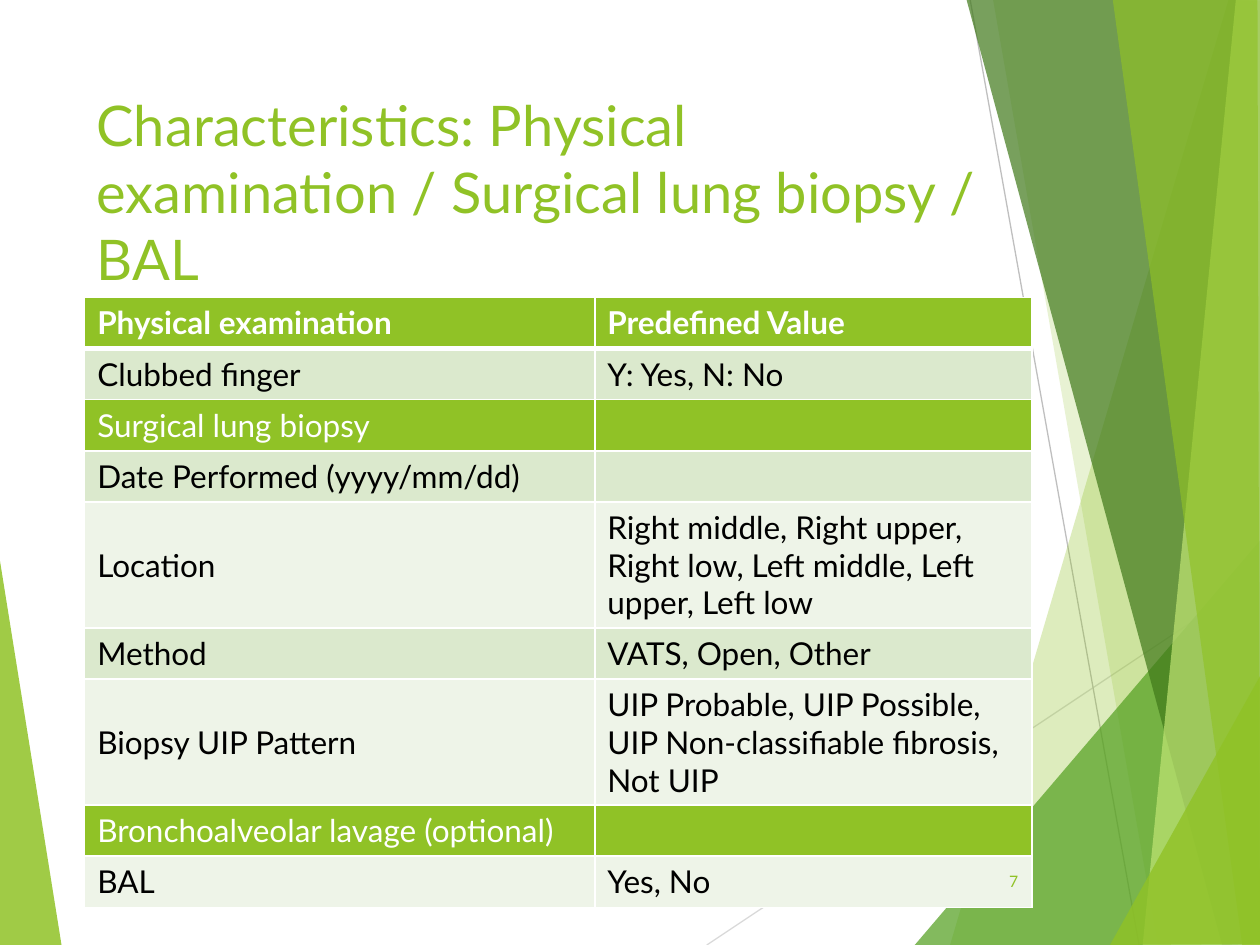
from pptx import Presentation
from pptx.dml.color import RGBColor
from pptx.enum import text as t
from pptx.oxml import parse_xml
from pptx.oxml.ns import nsdecls, qn
from pptx.util import Pt

LIME = RGBColor(0x90, 0xC2, 0x26)
GREEN = RGBColor(0x54, 0xA0, 0x21)
DARK = RGBColor(0x3F, 0x78, 0x19)
PALE = RGBColor(0xC0, 0xE4, 0x74)
BAND = RGBColor(0xDB, 0xE9, 0xCD)
LIGHT = RGBColor(0xEE, 0xF4, 0xE8)
WHITE = RGBColor(0xFF, 0xFF, 0xFF)
BLACK = RGBColor(0, 0, 0)
GREY = RGBColor(0xBF, 0xBF, 0xBF)
SILVER = RGBColor(0xD9, 0xD9, 0xD9)


def write(frame, words, size=18, color=BLACK, bold=False, align=t.PP_ALIGN.LEFT):
    para = frame.paragraphs[0]
    para.alignment = align
    for font in [para.font] + ([para.add_run().font] if words else []):
        font.name, font.size, font.bold = "Lato", Pt(size), bold
        font.color.rgb = color
    if words:
        para.runs[0].text = words


def edge(cell, side, width):
    cell._tc.get_or_add_tcPr().append(parse_xml(
        f'<a:{side} {nsdecls("a")} w="{Pt(width)}"><a:solidFill>'
        f'<a:srgbClr val="{WHITE}"/></a:solidFill></a:{side}>'))


deck = Presentation()
deck.slide_width, deck.slide_height = Pt(720), Pt(540)
slide = deck.slides.add_slide(deck.slide_layouts[5])
shapes = slide.shapes

lines = [
    (403.9, 540, 720.7, 329, SILVER),
    (554.4, 0, 650.9, 540, GREY),
]
facets = [
    (LIME, 85, [(-0.7, 316), (35.3, 540.7), (-0.7, 540)]),
    (LIME, 30, [(702, 0), (542.9, 540), (721.4, 540.7), (720.7, 0.7)]),
    (LIME, 20, [(567.4, -0.7), (661.7, 540), (720.7, 540), (720.7, -0.7)]),
    (GREEN, 72, [(522.7, 540), (720, 308.9), (720.7, 540)]),
    (DARK, 70, [(552.2, -0.7), (698.4, 540), (720.7, 539.3), (720.7, -0.7)]),
    (PALE, 70, [(706.3, -0.7), (653, 540), (720.7, 540), (720, -0.7)]),
    (LIME, 65, [(635.8, -0.7), (709.9, 540), (720, 540), (718.6, -0.7)]),
    (LIME, 80, [(634.3, 540), (720.7, 385.2), (720.7, 539.3)]),
]
for n, (color, alpha, dots) in enumerate(facets):
    pts = [(Pt(x), Pt(y)) for x, y in dots]
    build = shapes.build_freeform(*pts[0], scale=1.0)
    build.add_line_segments(pts[1:], close=True)
    facet = build.convert_to_shape()
    facet.shadow.inherit = False
    facet.fill.solid()
    facet.fill.fore_color.rgb = color
    facet.line.fill.background()
    tint = facet._element.spPr.find(qn("a:solidFill"))[0]
    tint.append(parse_xml(f'<a:alpha {nsdecls("a")} val="{alpha * 1000}"/>'))
    if n == 0:
        for *ends, shade in lines:
            line = shapes.add_connector(1, *map(Pt, ends))
            line.line.color.rgb = shade
            line.line.width = Pt(0.75)
            line._element.spPr.append(parse_xml(f'<a:effectLst {nsdecls("a")}/>'))

title = shapes.title
title.left, title.top, title.width, title.height = Pt(48), Pt(48), Pt(548.6), Pt(104)
title.text_frame.word_wrap = True
title.text_frame.auto_size = t.MSO_AUTO_SIZE.NONE
title.text_frame.vertical_anchor = t.MSO_ANCHOR.TOP
write(title.text_frame, "Characteristics: Physical examination / Surgical lung biopsy / BAL",
      size=32, color=LIME)
shapes._spTree.append(title._element)

rows = [
    ("Physical examination", "Predefined Value", LIME),
    ("Clubbed finger", "Y: Yes, N: No", BAND),
    ("Surgical lung biopsy", "", LIME),
    ("Date Performed (yyyy/mm/dd)", "", BAND),
    ("Location", "Right middle, Right upper, Right low, Left middle, Left upper, Left low", LIGHT),
    ("Method", "VATS, Open, Other", BAND),
    ("Biopsy UIP Pattern",
     "UIP Probable, UIP Possible, UIP Non-classifiable fibrosis, Not UIP", LIGHT),
    ("Bronchoalveolar lavage (optional)", "", LIME),
    ("BAL", "Yes, No", LIGHT),
]
table = shapes.add_table(len(rows), 2, Pt(48.4), Pt(170), Pt(541.4), Pt(262.8)).table
table.horz_banding = False
table.columns[0].width, table.columns[1].width = Pt(291.5), Pt(249.9)
for r, (*pair, fill) in enumerate(rows):
    table.rows[r].height = Pt(29.2)
    for c, words in enumerate(pair):
        cell = table.cell(r, c)
        cell.vertical_anchor = t.MSO_ANCHOR.MIDDLE if r else t.MSO_ANCHOR.TOP
        for side in ("lnL", "lnR", "lnT", "lnB"):
            thick = (r, side) in [(0, "lnB"), (1, "lnT")]
            edge(cell, side, 3 if thick else 1)
        cell.fill.solid()
        cell.fill.fore_color.rgb = fill
        write(cell.text_frame, words, color=WHITE if fill == LIME else BLACK, bold=r == 0)

page = shapes.add_textbox(Pt(548.6), Pt(488.9), Pt(40.3), Pt(28.8)).text_frame
page.word_wrap = True
page.vertical_anchor = t.MSO_ANCHOR.MIDDLE
write(page, "7", size=9, color=LIME, align=t.PP_ALIGN.RIGHT)

deck.save("out.pptx")
